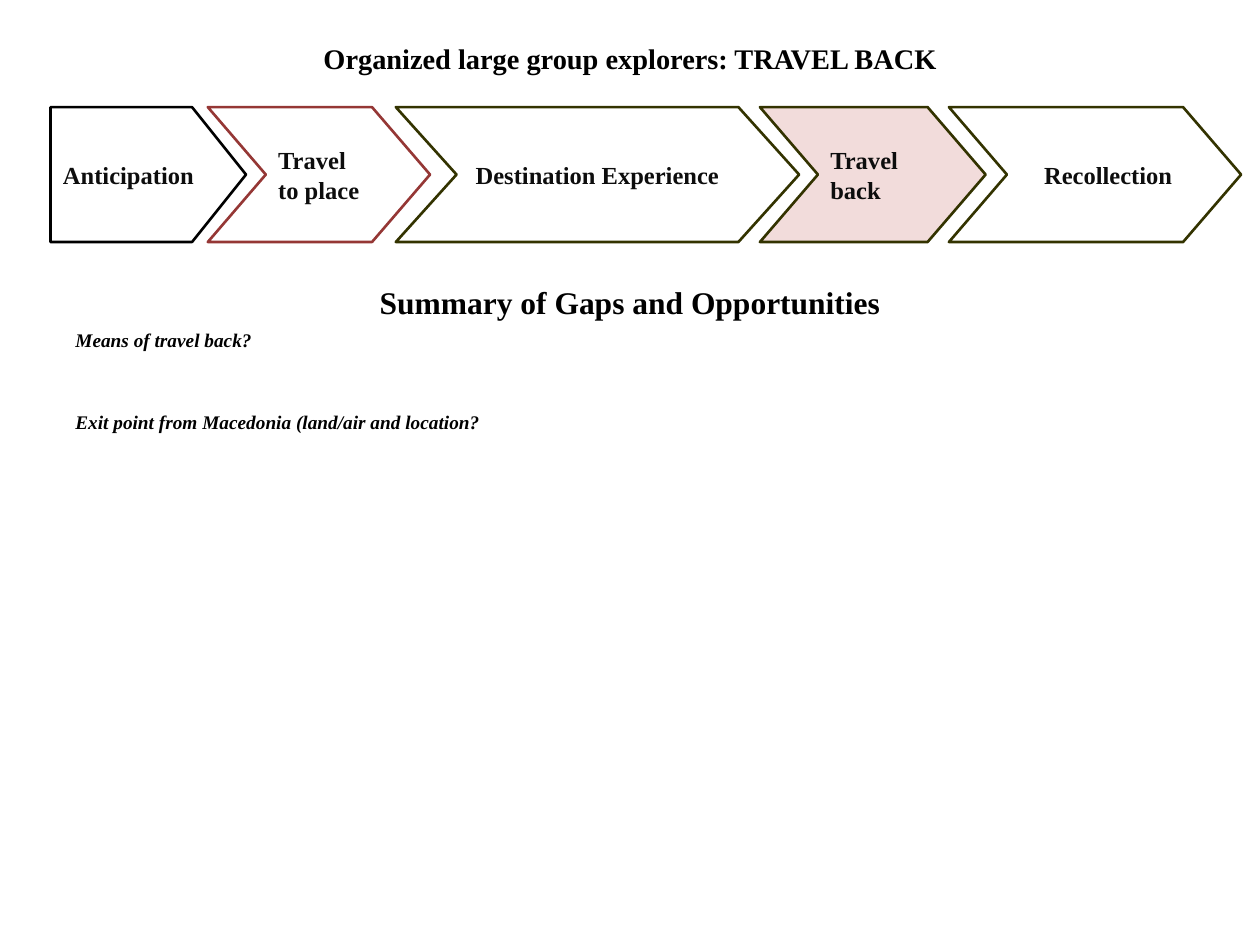
"""Build a travel-journey slide with a chevron process and open questions."""
from pptx import Presentation
from pptx.dml.color import RGBColor
from pptx.enum.shapes import MSO_SHAPE as SHAPE
from pptx.enum.text import MSO_ANCHOR as ANCHOR, PP_ALIGN as ALIGN
from pptx.util import Cm, Pt

FONT = "Times New Roman"
BLACK, INK, OLIVE = "000000", "0D0D0D", "333300"
STAGE_TOP, STAGE_HEIGHT = 2.16, 2.72
STAGES = [
    ("Anticipation", SHAPE.PENTAGON, 1.02, 3.94, 0.4, None, BLACK, ALIGN.LEFT, 0),
    ("Travel to place", SHAPE.CHEVRON, 4.19, 4.48, 0.43, None, "953735", ALIGN.LEFT, 0),
    ("Destination Experience", SHAPE.CHEVRON, 7.98, 8.13, 0.45, "FFFFFF", OLIVE, ALIGN.CENTER, 0),
    ("Travel back", SHAPE.CHEVRON, 15.32, 4.55, 0.43, "F2DCDB", OLIVE, ALIGN.LEFT, 0),
    ("Recollection", SHAPE.CHEVRON, 19.13, 5.89, 0.43, "FFFFFF", OLIVE, ALIGN.LEFT, 0.5),
]
QUESTIONS = ["Means of travel back?", "Exit point from Macedonia (land/air and location?"]


def color(value):
    return RGBColor.from_string(value)


def format_paragraph(p, size, ink=BLACK, align=ALIGN.LEFT, italic=False, before=0):
    p.alignment = align
    p.space_before = Pt(before)
    for r in p.runs:
        r.font.name, r.font.size = FONT, Pt(size)
        r.font.bold, r.font.italic = True, italic
        r.font.color.rgb = color(ink)


def add_text_box(s, top, height, anchor):
    tf = s.shapes.add_textbox(Cm(1.27), Cm(top), Cm(22.86), Cm(height)).text_frame
    tf.word_wrap = True
    tf.vertical_anchor = anchor
    return tf


def add_heading(s, text, top, height, size, anchor):
    tf = add_text_box(s, top, height, anchor)
    tf.text = text
    format_paragraph(tf.paragraphs[0], size, align=ALIGN.CENTER)


def add_questions(s, questions):
    tf = add_text_box(s, 6.5, 12.09, ANCHOR.TOP)
    tf.text = "\n".join(questions)
    for i, p in enumerate(tf.paragraphs):
        format_paragraph(p, 11, italic=True, before=33.6 if i else 2.2)


def add_stage(s, text, kind, left, width, point, fill, line, align, indent):
    sp = s.shapes.add_shape(kind, Cm(left), Cm(STAGE_TOP), Cm(width), Cm(STAGE_HEIGHT))
    sp.adjustments[0] = point
    sp.shadow.inherit = False
    if fill:
        sp.fill.solid()
        sp.fill.fore_color.rgb = color(fill)
    else:
        sp.fill.background()
    sp.line.color.rgb = color(line)
    sp.line.width = Pt(1.5)
    tf = sp.text_frame
    tf.word_wrap = True
    tf.vertical_anchor = ANCHOR.MIDDLE
    tf.margin_left = Cm(0.25 + indent)
    tf.margin_right = Cm(0 if indent else 0.25)
    tf.text = text
    format_paragraph(tf.paragraphs[0], 14, INK, align)


def main():
    prs = Presentation()
    prs.slide_width, prs.slide_height = Cm(25.4), Cm(19.05)
    s = prs.slides.add_slide(prs.slide_layouts[6])
    add_heading(s, "Summary of Gaps and Opportunities", 5.33, 1.27, 18, ANCHOR.BOTTOM)
    add_questions(s, QUESTIONS)
    add_heading(s, "Organized large group explorers: TRAVEL BACK", 0.76, 0.84, 16.2, ANCHOR.MIDDLE)
    for stage in STAGES:
        add_stage(s, *stage)
    prs.save("out.pptx")


if __name__ == "__main__":
    main()
